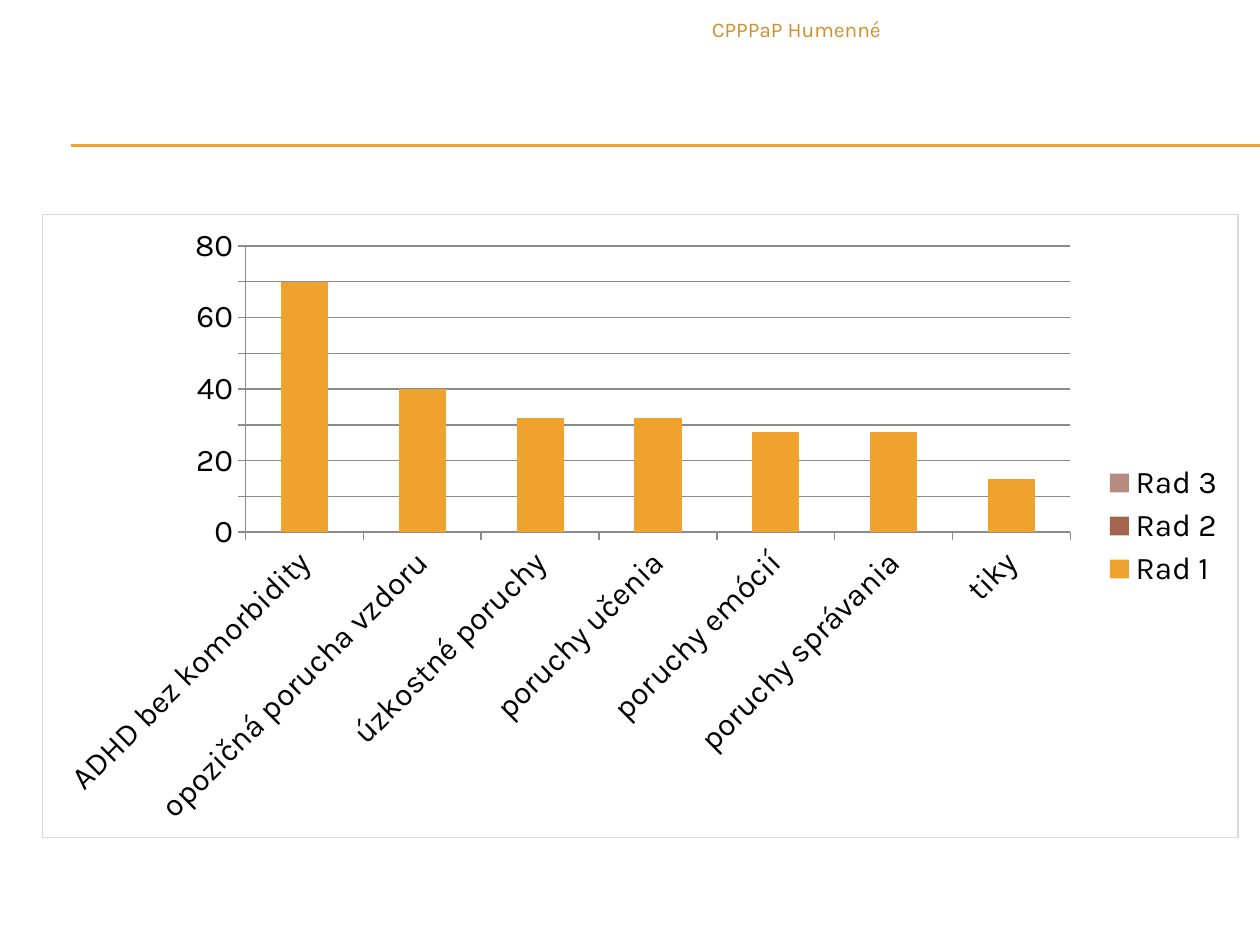
from lxml import etree
from pptx import Presentation
from pptx.chart.data import CategoryChartData
from pptx.dml.color import RGBColor
from pptx.enum import chart as ch, shapes, text
from pptx.oxml import parse_xml
from pptx.oxml.ns import nsdecls, qn
from pptx.util import Inches, Pt

FONT = "Karla"
GOLD, GREY, BORDER = "F0A22E", "8B8B8B", "D9D9D9"
HEADER = "CPPPaP Humenné"
RULE_YS = (1.15, 1.16)
DISORDERS = {
    "ADHD bez komorbidity": 70,
    "opozičná porucha vzdoru": 40,
    "úzkostné poruchy": 32,
    "poruchy učenia": 32,
    "poruchy emócií": 28,
    "poruchy správania": 28,
    "tiky": 15,
}
SERIES = [
    ("Rad 1", list(DISORDERS.values()), GOLD),
    ("Rad 2", [None] * len(DISORDERS), "A5644E"),
    ("Rad 3", [None] * len(DISORDERS), "B58B80"),
]
PLOT = {"x": 0.17, "y": 0.05, "w": 0.69, "h": 0.46}  # shares of the chart area


def color(value):
    return RGBColor.from_string(value)


def set_font(font, size, name=FONT, fill="000000"):
    font.size, font.name = Pt(size), name
    font.color.rgb = color(fill)


def set_line(line, fill, width):
    line.color.rgb = color(fill)
    line.width = Pt(width)


def add_text(s, content, box, size, fill, align):
    tf = s.shapes.add_textbox(*map(Inches, box)).text_frame
    tf.word_wrap = True
    p = tf.paragraphs[0]
    p.alignment = align
    r = p.add_run()
    r.text = content
    set_font(r.font, size, fill=fill)


def add_rule(s, y):
    line = s.shapes.add_connector(shapes.MSO_CONNECTOR.STRAIGHT,
                                  Inches(0.56), Inches(y), Inches(10), Inches(y))
    set_line(line.line, GOLD, 0.75)
    etree.SubElement(line._element.spPr, qn("a:effectLst"))


def set_plot_layout(chart):
    """Fix the inner plot area, leaving room for the slanted labels."""
    area = chart._chartSpace.chart.plotArea
    for old in area.findall(qn("c:layout")):
        area.remove(old)
    sizes = "".join(f'<c:{k} val="{v}"/>' for k, v in PLOT.items())
    area.insert(0, parse_xml(
        f'<c:layout {nsdecls("c")}><c:manualLayout><c:layoutTarget val="inner"/>'
        f'<c:xMode val="edge"/><c:yMode val="edge"/>{sizes}'
        '</c:manualLayout></c:layout>'))


def set_border(chart):
    border = parse_xml(
        f'<c:spPr {nsdecls("c", "a")}><a:noFill/><a:ln w="{Pt(0.75)}"><a:solidFill>'
        f'<a:srgbClr val="{BORDER}"/></a:solidFill></a:ln></c:spPr>')
    chart._chartSpace.chart.addnext(border)


def add_disorder_chart(s):
    data = CategoryChartData()
    data.categories = list(DISORDERS)
    for name, values, _ in SERIES:
        data.add_series(name, values)
    chart = s.shapes.add_chart(ch.XL_CHART_TYPE.COLUMN_STACKED, Inches(0.33), Inches(1.7),
                               Inches(9.5), Inches(4.95), data).chart
    set_font(chart.font, 10, "Arial")
    chart.has_title = False
    plot = chart.plots[0]
    plot.gap_width, plot.overlap, plot.vary_by_categories = 150, 100, False
    for series, (_, _, fill) in zip(plot.series, SERIES):
        series.format.fill.solid()
        series.format.fill.fore_color.rgb = color(fill)

    for axis in (chart.category_axis, chart.value_axis):
        axis.major_tick_mark = ch.XL_TICK_MARK.OUTSIDE
        set_font(axis.tick_labels.font, 18)
        set_line(axis.format.line, GREY, 0.79)
    slant = chart.category_axis._element.find(qn("c:txPr")).find(qn("a:bodyPr"))
    slant.set("rot", str(-45 * 60000))
    slant.set("vert", "horz")

    values = chart.value_axis
    values.minimum_scale, values.maximum_scale, values.major_unit = 0, 80, 10
    values.has_major_gridlines = True
    set_line(values.major_gridlines.format.line, GREY, 0.79)

    chart.has_legend = True
    chart.legend.position = ch.XL_LEGEND_POSITION.RIGHT
    chart.legend.include_in_layout = False
    set_font(chart.legend.font, 18)
    set_plot_layout(chart)
    set_border(chart)


def main():
    prs = Presentation()
    prs.slide_width, prs.slide_height = Inches(10), Inches(7.5)
    s = prs.slides.add_slide(prs.slide_layouts[6])
    for y in RULE_YS:
        add_rule(s, y)
    add_disorder_chart(s)
    add_text(s, HEADER, (3.92, 0.08, 3.17, 0.32), size=12, fill="D38E28",
             align=text.PP_ALIGN.RIGHT)
    prs.save("out.pptx")


if __name__ == "__main__":
    main()
